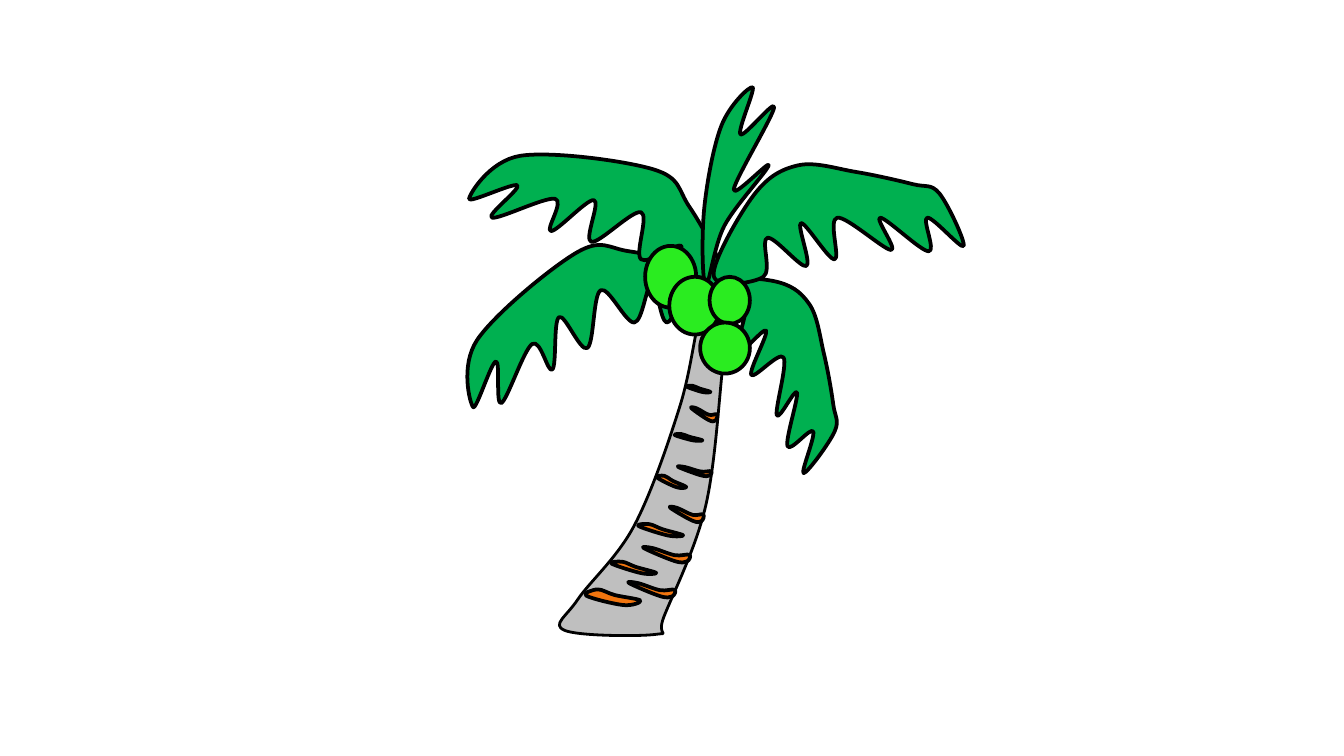
from math import cos, radians, sin

from pptx import Presentation
from pptx.dml.color import RGBColor
from pptx.enum.shapes import MSO_SHAPE
from pptx.oxml.ns import qn
from pptx.util import Pt
from lxml.etree import SubElement

PX = 9144  # EMU per px, 100 px to the inch
SLIDE_WIDTH = 1000

BLACK = RGBColor(0x00, 0x00, 0x00)
BARK = RGBColor(0xBF, 0xBF, 0xBF)
LEAF = RGBColor(0x00, 0xB0, 0x50)
COCONUT = RGBColor(0x2A, 0xEC, 0x20)
ORANGE = RGBColor(0xF1, 0x75, 0x0F)

TRUNK = [(430, 446), (472, 391), (506, 302), (522, 231), (534, 224), (543, 224),
         (538, 271), (525, 377), (494, 459), (488, 472), (420, 469)]

# Rotation in degrees, then the points as they lie on the slide
FRONDS = [
    (0, [(543, 221), (520, 201), (468, 187), (429, 188), (355, 253), (352, 303),
         (369, 269), (373, 300), (396, 256), (411, 275), (416, 236), (437, 259),
         (447, 216), (472, 240), (485, 211), (496, 240), (513, 216)]),
    (15.7, [(520, 210), (575, 209), (602, 226), (613, 263), (620, 301), (621, 321),
            (598, 352), (605, 321), (586, 332), (593, 292), (578, 309), (583, 266),
            (559, 279), (570, 246), (548, 263), (554, 230), (532, 241)]),
    (47, [(539, 232), (538, 202), (513, 154), (486, 126), (387, 116), (349, 148),
          (385, 138), (366, 162), (413, 148), (410, 172), (442, 149), (440, 180),
          (477, 158), (477, 193), (507, 183), (493, 210), (523, 207)]),
    (311.4, [(531, 205), (561, 145), (594, 123), (637, 128), (679, 137), (699, 144),
             (717, 183), (690, 162), (691, 187), (655, 162), (663, 186), (623, 162),
             (621, 193), (596, 166), (600, 198), (571, 177), (568, 206)]),
    (6.4, [(525, 212), (524, 155), (537, 93), (560, 65), (551, 100), (576, 80),
           (546, 141), (572, 123), (539, 168)]),
]

COCONUTS = [(480, 183, 38, 46), (498, 206, 38, 43), (528, 206, 30, 35), (521, 240, 37, 38)]

# Streak outlines as fractions of their boxes
LEFT_STREAK = [(0, 0.15), (0.65, 0.94), (0.98, 0.92), (0.53, 0.42), (0.24, 0)]
RIGHT_STREAK = [(0.92, 0.98), (0.67, 0.96), (0.03, 0.08), (0.22, 0.08),
                (0.67, 0.56), (0.97, 0.53)]
LEFT_BOXES = [(437, 436, 39, 17), (455, 418, 34, 9), (475, 390, 34, 9),
              (489, 354, 22, 9), (502, 323, 21, 5), (511, 287, 18, 5)]
RIGHT_BOXES = [(467, 433, 36, 11), (478, 407, 36, 11), (498, 377, 26, 11),
               (504, 347, 26, 7), (514, 303, 20, 10)]
LOWEST_STREAK_TURN = 346.2


def turn(point, degrees):
    """Turn a point clockwise about the slide's top left corner."""
    x, y = point
    a = radians(degrees)
    return x * cos(a) - y * sin(a), x * sin(a) + y * cos(a)


def paint(sp, color, weight):
    sp.shadow.inherit = False
    sp.fill.solid()
    sp.fill.fore_color.rgb = color
    sp.line.color.rgb = BLACK
    sp.line.width = Pt(weight)


def smooth(sp, points):
    """Replace the straight sides by a closed Catmull-Rom curve through the points."""
    outline = sp._element.find(".//" + qn("a:path"))
    for side in outline.findall(qn("a:lnTo")):
        outline.remove(side)
    close = outline[-1]
    n = len(points)
    for i in range(n):
        before, start, end, after = (points[(i + k) % n] for k in (-1, 0, 1, 2))
        leave = [s + (e - b) / 6 for b, s, e in zip(before, start, end)]
        arrive = [e - (a - s) / 6 for s, e, a in zip(start, end, after)]
        curve = SubElement(outline, qn("a:cubicBezTo"))
        for x, y in (leave, arrive, end):
            SubElement(curve, qn("a:pt"), x=str(round(x - sp.left)), y=str(round(y - sp.top)))
        close.addprevious(curve)


def add_curve(slide, points, color, weight=2, rotation=0):
    """Draw a closed curve through slide points, in a frame that has the rotation."""
    upright = [turn((x * PX, y * PX), -rotation) for x, y in points]
    builder = slide.shapes.build_freeform(*upright[0])
    builder.add_line_segments(upright[1:], close=True)
    sp = builder.convert_to_shape()
    smooth(sp, upright)
    center = turn((sp.left + sp.width / 2, sp.top + sp.height / 2), rotation)
    sp.left = round(center[0] - sp.width / 2)
    sp.top = round(center[1] - sp.height / 2)
    sp.rotation = rotation
    paint(sp, color, weight)
    return sp


def add_coconut(slide, box):
    sp = slide.shapes.add_shape(MSO_SHAPE.OVAL, *(v * PX for v in box))
    paint(sp, COCONUT, 2)


def add_streak(slide, outline, box):
    left, top, width, height = box
    return add_curve(slide, [(left + u * width, top + v * height) for u, v in outline], ORANGE)


def main():
    prs = Presentation()
    prs.slide_width = SLIDE_WIDTH * PX
    prs.slide_height = prs.slide_width * 9 // 16
    slide = prs.slides.add_slide(prs.slide_layouts[6])

    add_curve(slide, TRUNK, BARK, weight=1.5)
    for rotation, points in FRONDS:
        add_curve(slide, points, LEAF, rotation=rotation)
    for box in COCONUTS:
        add_coconut(slide, box)
    left_streaks = [add_streak(slide, LEFT_STREAK, box) for box in LEFT_BOXES]
    left_streaks[0].rotation = LOWEST_STREAK_TURN
    for box in RIGHT_BOXES:
        add_streak(slide, RIGHT_STREAK, box)

    prs.save("out.pptx")


if __name__ == "__main__":
    main()
